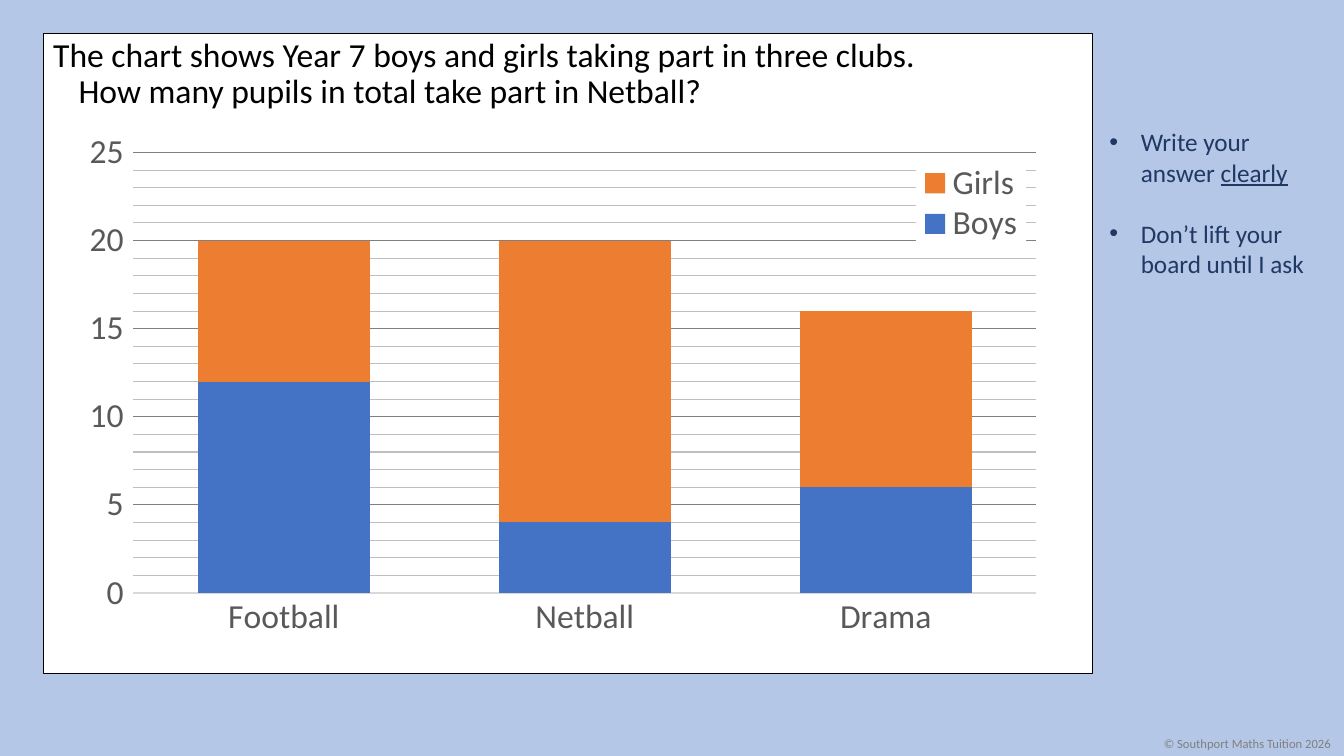
"""Builds a quiz slide with a stacked column chart of club members."""
from lxml import etree
from pptx import Presentation
from pptx import util as u
from pptx.chart import data
from pptx.dml import color
from pptx.enum import chart as ec, shapes, text
from pptx.oxml import ns


def rgb(value):
    return color.RGBColor.from_string(value)


def element(parent, tag, index=None, **attrs):
    child = etree.Element(ns.qn(tag), attrs)
    parent.insert(len(parent) if index is None else index, child)
    return child


class Board:
    font = "Calibri"
    grey = "595959"

    def __init__(self, prs, background):
        self.s = prs.slides.add_slide(prs.slide_layouts[6])
        fill = self.s.background.fill
        fill.solid()
        fill.fore_color.rgb = rgb(background)

    def style(self, font, size, colour):
        font.name, font.size = self.font, u.Pt(size)
        font.color.rgb = rgb(colour)

    def hang(self, p, distance):
        pPr = p._p.get_or_add_pPr()
        pPr.set("marL", str(u.Cm(distance)))
        pPr.set("indent", str(-u.Cm(distance)))
        return pPr

    def question(self, box, wording):
        sp = self.s.shapes.add_shape(shapes.MSO_SHAPE.RECTANGLE, *map(u.Cm, box))
        sp.shadow.inherit = False
        sp.fill.solid()
        sp.fill.fore_color.rgb = rgb("FFFFFF")
        sp.line.color.rgb = rgb("000000")
        sp.line.width = u.Pt(1)
        tf = sp.text_frame
        tf.word_wrap = True
        tf.vertical_anchor = text.MSO_ANCHOR.TOP
        p = tf.paragraphs[0]
        p.text = wording
        p.alignment = text.PP_ALIGN.LEFT
        p.line_spacing = 0.9
        self.hang(p, 0.64)
        self.style(p.font, 24, "000000")

    def text_box(self, box, items, size, colour, bullets=False):
        tf = self.s.shapes.add_textbox(*map(u.Cm, box)).text_frame
        tf.word_wrap = bullets
        for i, runs in enumerate(items):
            p = tf.add_paragraph() if i else tf.paragraphs[0]
            if i:
                p.space_before = u.Pt(22)
            if bullets:
                pPr = self.hang(p, 0.79)
                element(pPr, "a:buFont", typeface="Arial")
                element(pPr, "a:buChar", char="•")
            self.style(p.font, size, colour)
            for wording, underlined in runs:
                r = p.add_run()
                r.text = wording
                if underlined:
                    r.font.underline = True

    def place(self, part, index, inner=False, **fractions):
        for old in part.findall(ns.qn("c:layout")):
            part.remove(old)
        manual = element(element(part, "c:layout", index), "c:manualLayout")
        if inner:
            element(manual, "c:layoutTarget", val="inner")
        for mode in ("xMode", "yMode"):
            element(manual, "c:" + mode, val="edge")
        for name, value in fractions.items():
            element(manual, "c:" + name, val=str(value))

    def axis_line(self, line, colour):
        line.color.rgb = rgb(colour)
        line.width = u.Pt(0.75)

    def minor_grid(self, axis, colour):
        axis.has_minor_gridlines = True
        grid = axis._element.find(ns.qn("c:minorGridlines"))
        line = element(element(grid, "c:spPr"), "a:ln", w=str(u.Pt(0.75)))
        element(element(line, "a:solidFill"), "a:srgbClr", val=colour)

    def stacked_chart(self, box, categories, series):
        cd = data.CategoryChartData()
        cd.categories = categories
        for name, values, _ in series:
            cd.add_series(name, values)
        chart = self.s.shapes.add_chart(
            ec.XL_CHART_TYPE.COLUMN_STACKED, *map(u.Cm, box), cd).chart
        self.style(chart.font, 10, "000000")
        chart.has_title = False
        plot = chart.plots[0]
        plot.vary_by_categories = False
        plot.gap_width, plot.overlap = 75, 100
        for ser, (_, _, colour) in zip(plot.series, series):
            ser.format.fill.solid()
            ser.format.fill.fore_color.rgb = rgb(colour)
        self.place(chart._chartSpace.chart.plotArea, 0, inner=True,
                   x=0.075, y=0.051, w=0.901, h=0.817)

        cat, val = chart.category_axis, chart.value_axis
        for axis in (cat, val):
            self.style(axis.tick_labels.font, 24, self.grey)
        cat.major_tick_mark = ec.XL_TICK_MARK.NONE
        self.axis_line(cat.format.line, "D9D9D9")
        val.minimum_scale, val.maximum_scale = 0, 25
        val.major_unit, val.minor_unit = 5, 1
        val.has_major_gridlines = True
        self.axis_line(val.major_gridlines.format.line, "808080")
        self.minor_grid(val, "BFBFBF")
        val.format.line.fill.background()

        chart.has_legend = True
        legend = chart.legend
        legend.position = ec.XL_LEGEND_POSITION.RIGHT
        legend.include_in_layout = False
        self.place(legend._element, 1, x=0.856, y=0.07, w=0.11, h=0.15)
        fill = element(element(legend._element, "c:spPr"), "a:solidFill")
        element(fill, "a:srgbClr", val="FFFFFF")
        self.style(legend.font, 24, self.grey)


def main():
    prs = Presentation()
    prs.slide_width, prs.slide_height = u.Cm(33.87), u.Cm(19.05)
    board = Board(prs, "B4C7E7")
    board.question(
        (1.09, 0.84, 26.44, 16.13),
        "The chart shows Year 7 boys and girls taking part in three clubs.\v"
        "How many pupils in total take part in Netball?")
    board.text_box(
        (27.71, 3.07, 5.89, 4.11),
        [[("Write your answer ", False), ("clearly", True)],
         [("Don’t lift your board until I ask", False)]],
        18, "203864", bullets=True)
    board.text_box((29.08, 18.42, 4.78, 0.64),
                   [[("© Southport Maths Tuition 2026", False)]], 9, "808080")
    board.stacked_chart(
        (1.47, 3.15, 25.25, 13.59), ("Football", "Netball", "Drama"),
        [("Boys", (12, 4, 6), "4472C4"), ("Girls", (8, 16, 10), "ED7D31")])
    prs.save("out.pptx")


if __name__ == "__main__":
    main()
